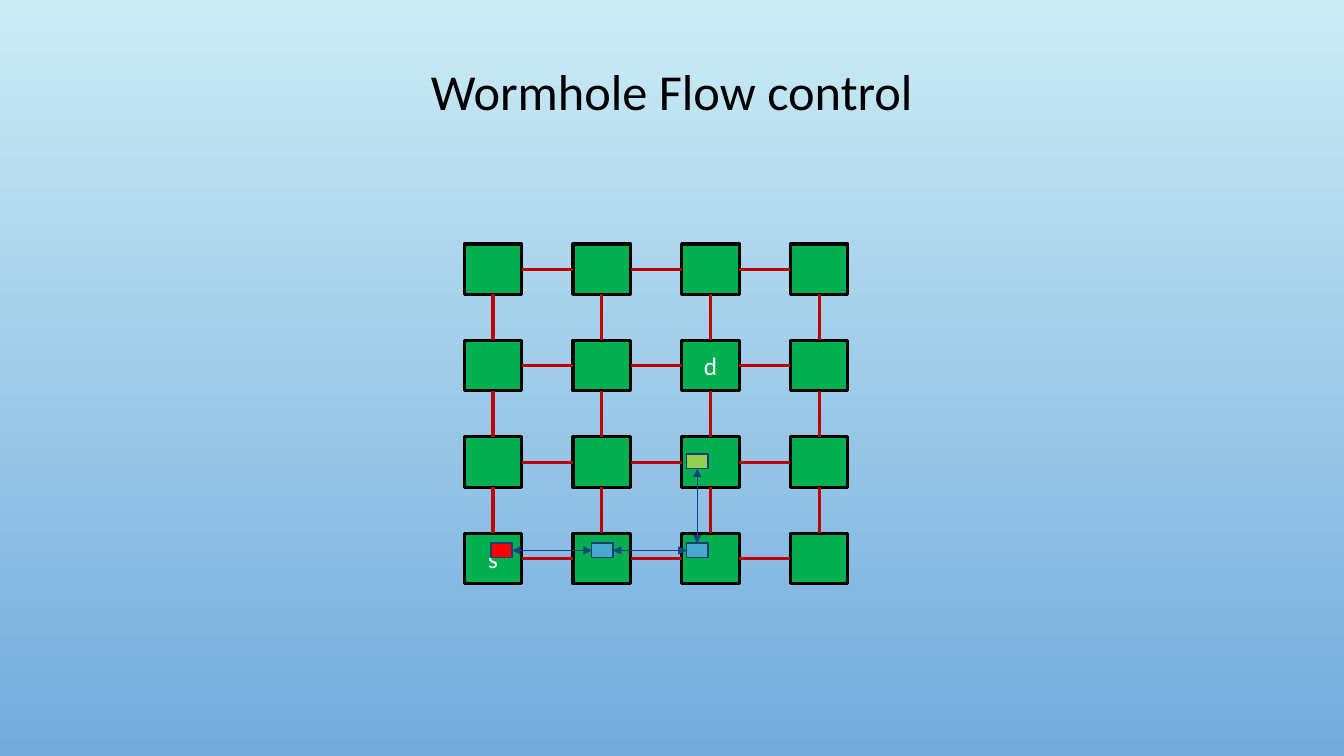
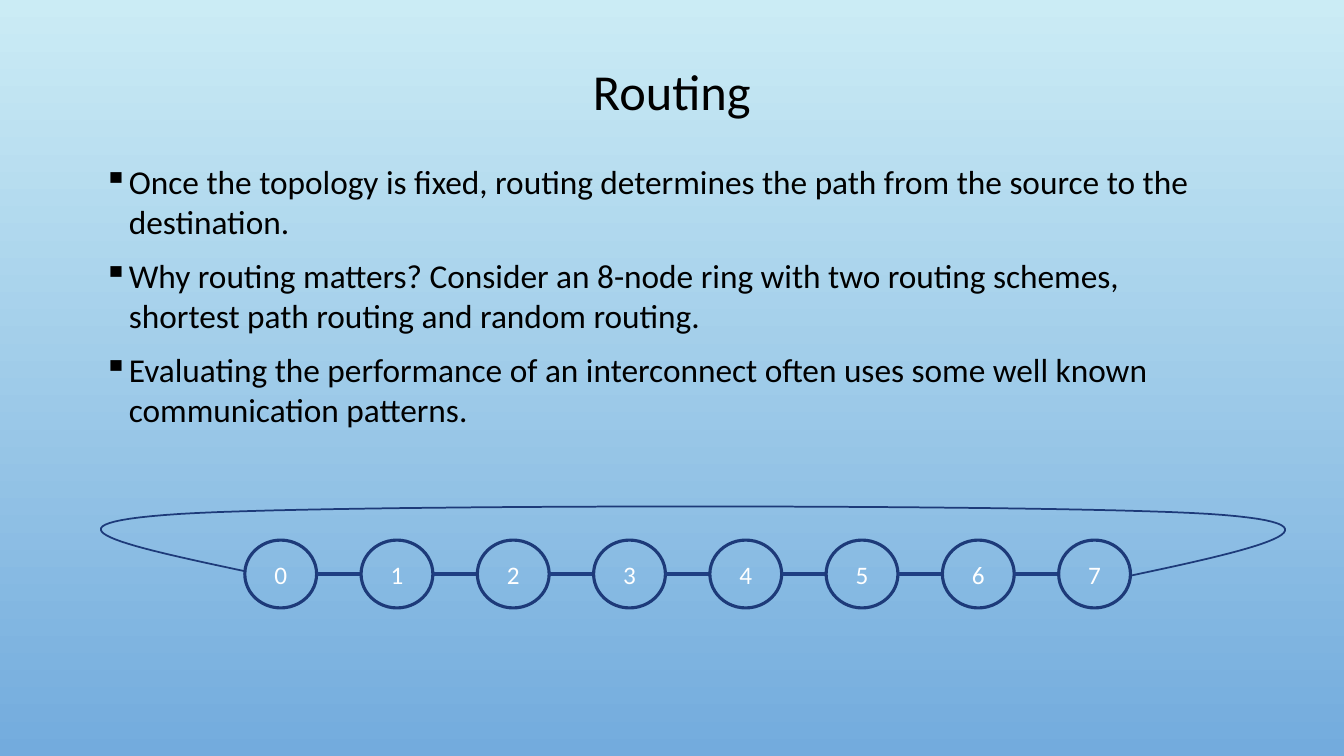
from itertools import pairwise

from lxml import etree
from pptx import Presentation
from pptx.dml.color import RGBColor
from pptx.enum.shapes import MSO_CONNECTOR, MSO_SHAPE
from pptx.enum.text import MSO_ANCHOR, PP_ALIGN
from pptx.oxml.ns import qn
from pptx.util import Cm, Pt

RECTANGLE, OVAL = MSO_SHAPE.RECTANGLE, MSO_SHAPE.OVAL
STRAIGHT = MSO_CONNECTOR.STRAIGHT
CENTER, MIDDLE, TOP_ANCHOR = PP_ALIGN.CENTER, MSO_ANCHOR.MIDDLE, MSO_ANCHOR.TOP
TOP, LEFT, BOTTOM, RIGHT = range(4)
TITLE_ONLY = 5

BLACK, WHITE, NAVY, ARROW_BLUE = "000000", "FFFFFF", "1D3A79", "1F3F83"
GREEN, LIME, SKY, RED, DARK_RED = "00B050", "92D050", "48A8D0", "FF0000", "C00000"
BACKGROUND = ("CBECF5", "73ABDD")

TITLE_FONT = {"name": "Calibri", "size": Pt(36), "bold": False}
BODY_FONT = {"name": "Calibri", "size": Pt(23.8)}
LABEL_FONT = {"name": "Calibri", "size": Pt(18)}

BULLETS = (
    "Once the topology is fixed, routing determines the path from the source to the destination.",
    "Why routing matters? Consider an 8-node ring with two routing schemes, "
    "shortest path routing and random routing.",
    "Evaluating the performance of an interconnect often uses some well known "
    "communication patterns.",
)

# Centimetres: start point, then control, control, end for each arc.
RING_START = (28.52, 14.5)
RING_ARCS = (
    ((31.5, 13.87), (34.44, 13.21), (30.45, 12.95)),
    ((26.47, 12.7), (8.59, 12.7), (4.55, 12.95)),
    ((0.51, 13.21), (3.35, 13.79), (6.2, 14.4)),
)


def rgb(value):
    return RGBColor.from_string(value)


def apply(target, values):
    for name, value in values.items():
        setattr(target, name, value)


def format_font(font, values, color):
    apply(font, values)
    font.color.rgb = rgb(color)


def format_line(line, color, width):
    line.color.rgb = rgb(color)
    line.width = Pt(width)


def set_background(master):
    fill = master.background.fill
    fill.gradient()
    fill.gradient_angle = 270
    for stop, color in zip(fill.gradient_stops, BACKGROUND):
        stop.color.rgb = rgb(color)


def add_titled_slide(presentation, text):
    slide = presentation.slides.add_slide(presentation.slide_layouts[TITLE_ONLY])
    title = slide.shapes.title
    apply(title, {"left": Cm(2.54), "top": Cm(0.81), "width": Cm(28.78), "height": Cm(3.12)})
    title.text_frame.text = text
    title.text_frame.vertical_anchor = MIDDLE
    paragraph = title.text_frame.paragraphs[0]
    apply(paragraph, {"alignment": CENTER, "line_spacing": 0.9})
    format_font(paragraph.font, TITLE_FONT, BLACK)
    return slide


def add_box(slide, kind, left, top, size, line, fill=None, text=""):
    """Add a preset shape; size is (width, height) in cm, line is (colour, points)."""
    shape = slide.shapes.add_shape(kind, Cm(left), Cm(top), *map(Cm, size))
    shape.shadow.inherit = False
    if fill:
        shape.fill.solid()
        shape.fill.fore_color.rgb = rgb(fill)
    else:
        shape.fill.background()
    format_line(shape.line, *line)
    if text:
        frame = shape.text_frame
        frame.text = text
        frame.vertical_anchor = MIDDLE
        frame.paragraphs[0].alignment = CENTER
        format_font(frame.paragraphs[0].font, LABEL_FONT, WHITE)
    return shape


def add_line(slide, start, end, color, width, arrows=()):
    connector = slide.shapes.add_connector(STRAIGHT, *map(Cm, start + end))
    format_line(connector.line, color, width)
    outline = connector.line._get_or_add_ln()
    for tag in arrows:
        etree.SubElement(outline, qn(tag), type="triangle")
    etree.SubElement(connector._element.spPr, qn("a:effectLst"))
    return connector


def join(slide, first, first_side, second, second_side, color, width, arrows=()):
    """Link the side middles of two rectangles."""
    connector = add_line(slide, (0, 0), (0, 0), color, width, arrows)
    connector.begin_connect(first, first_side)
    connector.end_connect(second, second_side)


def add_bullets(slide, texts):
    box = slide.shapes.add_textbox(Cm(2.36), Cm(3.94), Cm(28.78), Cm(7.42))
    frame = box.text_frame
    apply(frame, {"word_wrap": True, "vertical_anchor": TOP_ANCHOR})
    for index, text in enumerate(texts):
        paragraph = frame.add_paragraph() if index else frame.paragraphs[0]
        paragraph.text = text
        paragraph.space_before = Pt(10 if index else 0)
        properties = paragraph._p.get_or_add_pPr()
        properties.set("marL", str(Cm(0.64)))
        properties.set("indent", str(-Cm(0.64)))
        bullet_color = etree.SubElement(properties, qn("a:buClr"))
        etree.SubElement(bullet_color, qn("a:srgbClr"), val=BLACK)
        etree.SubElement(properties, qn("a:buChar"), char="▪")
        format_font(paragraph.font, BODY_FONT, BLACK)


def add_curve(slide, start, arcs, color, width, steps=30):
    """Draw an open outline through cubic Bézier arcs."""
    points, begin = [], start
    for arc in arcs:
        for step in range(1, steps + 1):
            t = step / steps
            weights = ((1 - t) ** 3, 3 * t * (1 - t) ** 2, 3 * t * t * (1 - t), t ** 3)
            points.append(tuple(
                Cm(sum(weight * value for weight, value in zip(weights, axis)))
                for axis in zip(begin, *arc)
            ))
        begin = arc[-1]
    builder = slide.shapes.build_freeform(*map(Cm, start))
    builder.add_line_segments(points, close=False)
    curve = builder.convert_to_shape()
    curve.shadow.inherit = False
    curve.fill.background()
    format_line(curve.line, color, width)


def add_mesh(slide, count=4):
    labels = {(1, 2): "d", (3, 0): "s"}
    nodes = {
        (row, column): add_box(
            slide, RECTANGLE, 11.7 + 2.74 * column, 6.15 + 2.43 * row, (1.45, 1.27),
            (BLACK, 2.25), GREEN, labels.get((row, column), ""))
        for row in range(count) for column in range(count)
    }
    for (row, column), node in nodes.items():
        if column < count - 1:
            join(slide, node, RIGHT, nodes[row, column + 1], LEFT, DARK_RED, 2.25)
        if row < count - 1:
            join(slide, node, BOTTOM, nodes[row + 1, column], TOP, DARK_RED, 2.25)


def add_flits(slide):
    places = ((12.37, 13.69, RED), (14.91, 13.69, SKY), (17.3, 13.69, SKY), (17.3, 11.45, LIME))
    flits = [add_box(slide, RECTANGLE, left, top, (0.54, 0.36), (NAVY, 1.25), fill)
             for left, top, fill in places]
    sides = ((RIGHT, LEFT), (RIGHT, LEFT), (TOP, BOTTOM))
    for (first, second), (leaving, entering) in zip(pairwise(flits), sides):
        join(slide, first, leaving, second, entering, ARROW_BLUE, 0.75,
             ("a:headEnd", "a:tailEnd"))


def add_ring(slide, count=8):
    left, top, pitch, width, height = 6.17, 13.61, 2.93, 1.81, 1.71
    middle = top + height / 2
    for index in range(count):
        x = left + pitch * index
        add_box(slide, OVAL, x, top, (width, height), (NAVY, 2.25), text=str(index))
        if index < count - 1:
            add_line(slide, (x + width, middle), (x + pitch, middle), ARROW_BLUE, 2.25)
    add_curve(slide, RING_START, RING_ARCS, NAVY, 1.25)


def main():
    presentation = Presentation()
    apply(presentation, {"slide_width": Cm(33.87), "slide_height": Cm(19.05)})
    set_background(presentation.slide_master)

    wormhole = add_titled_slide(presentation, "Wormhole Flow control")
    add_mesh(wormhole)
    add_flits(wormhole)

    routing = add_titled_slide(presentation, "Routing")
    add_bullets(routing, BULLETS)
    add_ring(routing)

    presentation.save("out.pptx")


if __name__ == "__main__":
    main()
